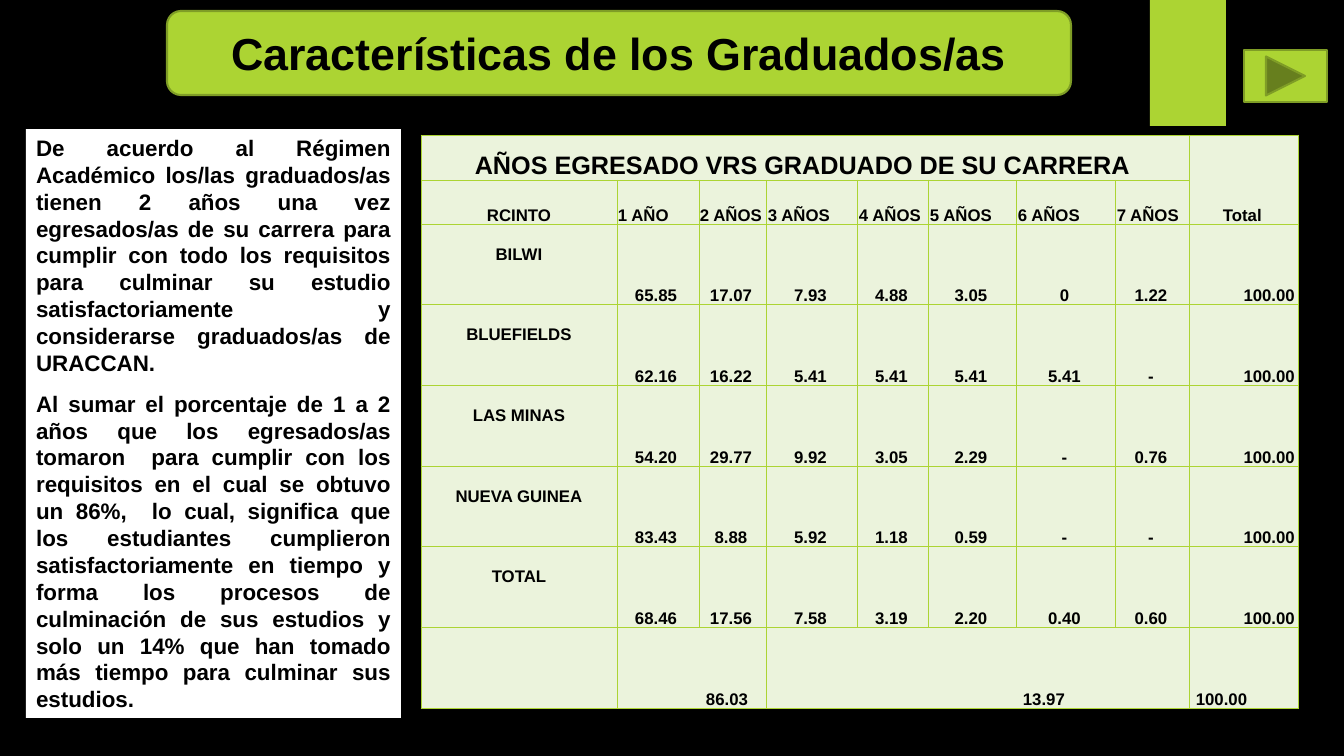
"""Builds the slide that compares years since leaving with graduation."""
import lxml.etree
import pptx
import pptx.dml.color
import pptx.enum.shapes
import pptx.enum.text
import pptx.oxml.ns
import pptx.util

BLACK = pptx.dml.color.RGBColor(0x00, 0x00, 0x00)
WHITE = pptx.dml.color.RGBColor(0xFF, 0xFF, 0xFF)
LIME = pptx.dml.color.RGBColor(0xAC, 0xD4, 0x33)
OLIVE = pptx.dml.color.RGBColor(0x7F, 0x9D, 0x26)
PALE = pptx.dml.color.RGBColor(0xEB, 0xF3, 0xDC)

SHAPES = pptx.enum.shapes.MSO_SHAPE
ALIGN = pptx.enum.text.PP_ALIGN
ANCHOR = pptx.enum.text.MSO_ANCHOR
QN = pptx.oxml.ns.qn

TITLE = "Características de los Graduados/as"
EXPLANATION = [
    "De acuerdo al Régimen Académico los/las graduados/as tienen 2 años una vez "
    "egresados/as de su carrera para cumplir con todo los requisitos para culminar "
    "su estudio satisfactoriamente y considerarse graduados/as de URACCAN.",
    "Al sumar el porcentaje de 1 a 2 años que los egresados/as tomaron  para cumplir "
    "con los requisitos en el cual se obtuvo un 86%,  lo cual, significa que los "
    "estudiantes cumplieron satisfactoriamente en tiempo y forma los procesos de "
    "culminación de sus estudios y solo un 14% que han tomado más tiempo para "
    "culminar sus estudios.",
]
TABLE_TITLE = "AÑOS EGRESADO VRS GRADUADO DE SU CARRERA"
YEARS = ["1 AÑO", "2 AÑOS", "3 AÑOS", "4 AÑOS", "5 AÑOS", "6 AÑOS", "7 AÑOS"]
CAMPUSES = [
    ("BILWI", ["65.85", "17.07", "7.93", "4.88", "3.05", "0", "1.22"]),
    ("BLUEFIELDS", ["62.16", "16.22", "5.41", "5.41", "5.41", "5.41", "-"]),
    ("LAS MINAS", ["54.20", "29.77", "9.92", "3.05", "2.29", "-", "0.76"]),
    ("NUEVA GUINEA", ["83.43", "8.88", "5.92", "1.18", "0.59", "-", "-"]),
    ("TOTAL", ["68.46", "17.56", "7.58", "3.19", "2.20", "0.40", "0.60"]),
]
FULL = "100.00"
COLUMN_WIDTHS = [196, 82, 68, 91, 71, 88, 99, 74, 109]
ROW_HEIGHTS = [45, 45] + [80, 81, 81] * 2


def px(length):
    """Turns pixels into EMU."""
    return pptx.util.Emu(round(length * 914400 / 100.8))


class SlideBuilder:
    """Holds the style and the current slide."""

    font_name = "Arial"

    def __init__(self, deck):
        """Adds a black slide with a title and a body."""
        self.slide = deck.slides.add_slide(deck.slide_layouts[1])
        self.slide.background.fill.solid()
        self.slide.background.fill.fore_color.rgb = BLACK

    def style(self, para, size, align):
        """Formats one paragraph."""
        para.alignment = align
        para.font.name = self.font_name
        para.font.size = pptx.util.Pt(size)
        para.font.bold = True
        para.font.color.rgb = BLACK

    def paint(self, shape, fill, line=None):
        """Sets the fill and the outline of a shape."""
        shape.fill.solid()
        shape.fill.fore_color.rgb = fill
        if line is None:
            shape.line.fill.background()
        else:
            shape.line.color.rgb = line
            shape.line.width = pptx.util.Pt(1.5)

    def place(self, shape, left, top, width, height):
        """Moves and sizes a placeholder."""
        shape.left, shape.top = px(left), px(top)
        shape.width, shape.height = px(width), px(height)
        shape.text_frame.word_wrap = True
        shape.text_frame.auto_size = pptx.enum.text.MSO_AUTO_SIZE.NONE

    def title(self, text, *position):
        """Writes the title over a rounded green bar."""
        box = self.slide.shapes.title
        bar = self.shape(SHAPES.ROUNDED_RECTANGLE, *position, OLIVE)
        box.element.addprevious(bar.element)
        self.place(box, *position)
        box.text_frame.text = text
        box.text_frame.vertical_anchor = ANCHOR.MIDDLE
        self.style(box.text_frame.paragraphs[0], 32, ALIGN.CENTER)

    def body(self, texts, *position):
        """Writes justified paragraphs on a white panel."""
        box = self.slide.placeholders[1]
        self.place(box, *position)
        self.paint(box, WHITE)
        box.text_frame.text = "\n".join(texts)
        box.text_frame.vertical_anchor = ANCHOR.TOP
        for index, para in enumerate(box.text_frame.paragraphs):
            properties = para._p.get_or_add_pPr()
            properties.set("marL", "0")
            properties.set("indent", "0")
            lxml.etree.SubElement(properties, QN("a:buNone"))
            para.space_before = pptx.util.Pt(10 if index else 0)
            para.line_spacing = 1.0
            self.style(para, 16, ALIGN.JUSTIFY)

    def shape(self, kind, left, top, width, height, line=None):
        """Adds a green preset shape."""
        shape = self.slide.shapes.add_shape(
            kind, px(left), px(top), px(width), px(height))
        shape.shadow.inherit = False
        self.paint(shape, LIME, line)
        return shape

    def table(self, left, top, widths, heights):
        """Adds an empty table with pale cells and green borders."""
        table = self.slide.shapes.add_table(
            len(heights), len(widths), px(left), px(top),
            px(sum(widths)), px(sum(heights))).table
        table.first_row = table.horz_banding = False
        for column, width in zip(table.columns, widths):
            column.width = px(width)
        for row, height in zip(table.rows, heights):
            row.height = px(height)
        for cell in table.iter_cells():
            properties = cell._tc.get_or_add_tcPr()
            for side in ("a:lnL", "a:lnR", "a:lnT", "a:lnB"):
                border = lxml.etree.SubElement(properties, QN(side), w="9525")
                paint = lxml.etree.SubElement(border, QN("a:solidFill"))
                lxml.etree.SubElement(paint, QN("a:srgbClr"), val=str(LIME))
            cell.fill.solid()
            cell.fill.fore_color.rgb = PALE
        return table

    def cell(self, cell, text, align=ALIGN.CENTER, size=12,
             anchor=ANCHOR.BOTTOM, left=1, top=1, right=1):
        """Writes one table cell."""
        cell.margin_left, cell.margin_right = px(left), px(right)
        cell.margin_top, cell.margin_bottom = px(top), 0
        cell.vertical_anchor = anchor
        cell.text = text
        self.style(cell.text_frame.paragraphs[0], size, align)


def main():
    """Builds and saves the deck."""
    deck = pptx.Presentation()
    deck.slide_width, deck.slide_height = px(1344), px(756)
    page = SlideBuilder(deck)
    page.shape(SHAPES.RECTANGLE, 1150, 0, 76, 126)

    table = page.table(421, 135, COLUMN_WIDTHS, ROW_HEIGHTS)
    total = len(COLUMN_WIDTHS) - 1
    last = len(ROW_HEIGHTS) - 1
    table.cell(0, 0).merge(table.cell(0, total - 1))
    table.cell(0, total).merge(table.cell(1, total))
    table.cell(last, 1).merge(table.cell(last, 2))
    table.cell(last, 3).merge(table.cell(last, total - 1))

    page.cell(table.cell(0, 0), TABLE_TITLE, size=18, right=7)
    page.cell(table.cell(0, total), "Total", right=5)
    page.cell(table.cell(1, 0), "RCINTO")
    for column, year in enumerate(YEARS, start=1):
        page.cell(table.cell(1, column), year, ALIGN.LEFT)
    for row, (campus, shares) in enumerate(CAMPUSES, start=2):
        page.cell(table.cell(row, 0), campus, anchor=ANCHOR.TOP, top=20)
        for column, share in enumerate(shares, start=1):
            page.cell(table.cell(row, column), share, right=5)
        page.cell(table.cell(row, total), FULL, ALIGN.RIGHT, right=4)
    page.cell(table.cell(last, 1), "86.03", ALIGN.RIGHT, right=19)
    page.cell(table.cell(last, 3), "13.97", ALIGN.RIGHT, right=125)
    page.cell(table.cell(last, total), FULL, ALIGN.LEFT, left=6)

    page.body(EXPLANATION, 26, 129, 375, 589)
    page.title(TITLE, 167, 11, 904, 84)
    page.shape(SHAPES.ACTION_BUTTON_FORWARD_OR_NEXT, 1244, 50, 83, 52, OLIVE)
    deck.save("out.pptx")


if __name__ == "__main__":
    main()
